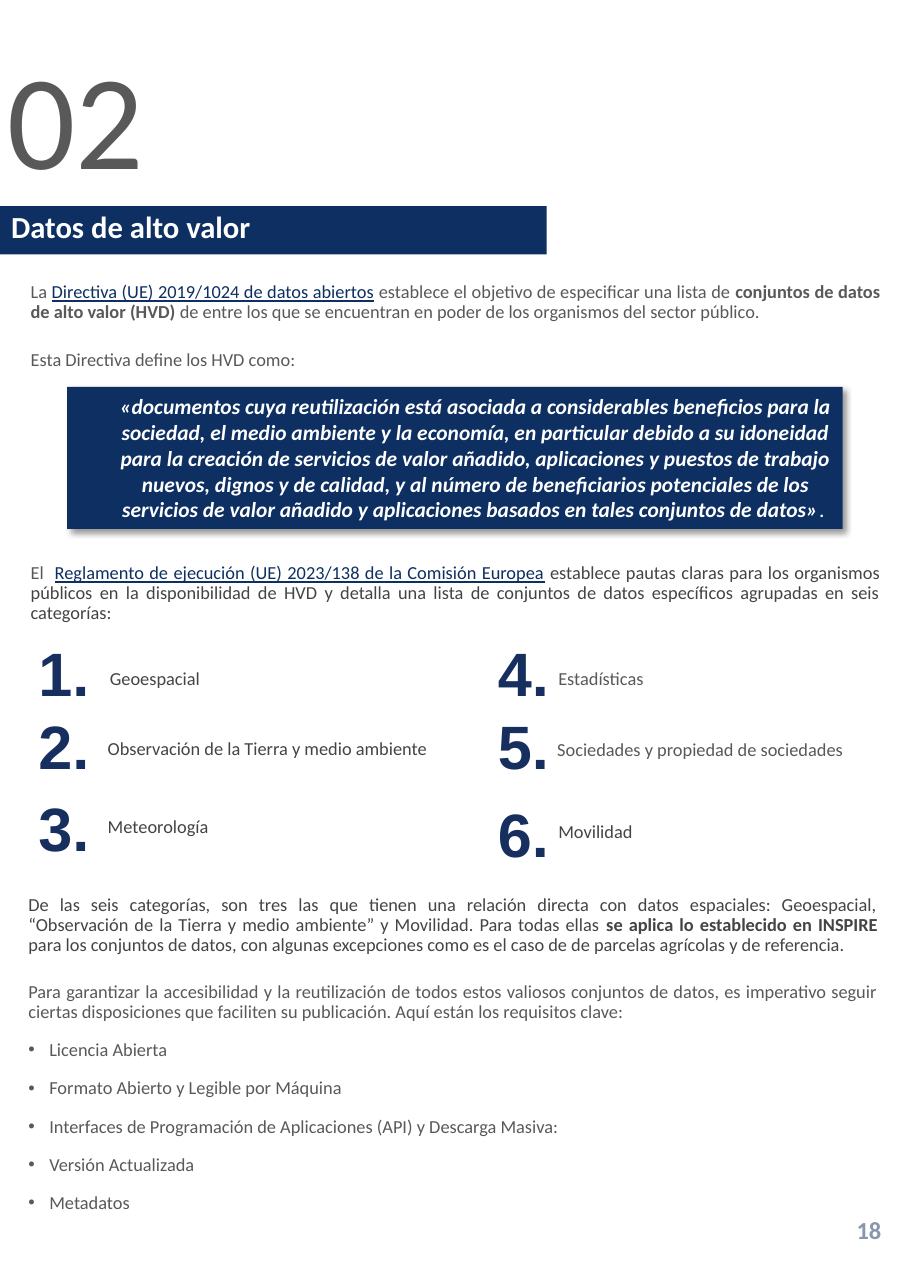
from lxml.etree import SubElement
from pptx import Presentation
from pptx.dml.color import RGBColor
from pptx.enum.shapes import MSO_SHAPE as Shape
from pptx.enum.text import MSO_ANCHOR as Anchor, MSO_AUTO_SIZE as AutoSize, PP_ALIGN as Align
from pptx.oxml.ns import qn
from pptx.util import Inches, Pt

NAVY, NUMERAL, WHITE = "0E2F62", "172F5E", "FFFFFF"
GRAY, DARK, PALE = "595959", "444444", "8996AE"
BODY_WIDTH, BODY_HEIGHT = 95.65, 10.69


def color(value):
    """Turn a hex string into a colour."""
    return RGBColor.from_string(value)


class Page:
    """Style and current slide, measured on a grid of 100 columns by 100 rows."""

    def __init__(self, presentation):
        """Add a title-only slide."""
        self.slide = presentation.slides.add_slide(presentation.slide_layouts[5])
        self.column = presentation.slide_width / 100
        self.row = presentation.slide_height / 100

    def box(self, left, top, width, height):
        """Convert grid lengths to slide lengths."""
        return (round(left * self.column), round(top * self.row),
                round(width * self.column), round(height * self.row))

    def fill_paragraph(self, paragraph, runs, size=12, font="Calibri", align=Align.JUSTIFY,
                       spacing=0.9, before=0, after=0, indent=0, bullet=False):
        """Fill a paragraph with (text, colour, marks) runs; marks are b, i and u."""
        properties = paragraph._p.get_or_add_pPr()
        if indent:
            properties.set("marL", str(Inches(indent)))
        if bullet:
            properties.set("indent", str(-Inches(indent)))
            SubElement(properties, qn("a:buFont")).set("typeface", "Arial")
            SubElement(properties, qn("a:buChar")).set("char", "•")
        paragraph.alignment = align
        paragraph.line_spacing = spacing
        paragraph.space_before, paragraph.space_after = Pt(before), Pt(after)
        for text, fill, marks in runs:
            run = paragraph.add_run()
            run.text = text
            run.font.name, run.font.size = font, Pt(size)
            run.font.color.rgb = color(fill)
            run.font.bold, run.font.italic = "b" in marks, "i" in marks
            run.font.underline = "u" in marks

    def frame(self, shape, anchor=Anchor.TOP):
        """Prepare the text frame of a shape."""
        frame = shape.text_frame
        frame.word_wrap, frame.auto_size = True, AutoSize.NONE
        frame.vertical_anchor = anchor
        return frame

    def title(self, place, text):
        """Place the title as a navy band."""
        shape = self.slide.shapes.title
        shape.left, shape.top, shape.width, shape.height = self.box(*place)
        shape.fill.solid()
        shape.fill.fore_color.rgb = color(NAVY)
        self.fill_paragraph(self.frame(shape).paragraphs[0], [(text, WHITE, "b")],
                            size=20, align=Align.LEFT)

    def text(self, place, *paragraphs, margin=0.1, **style):
        """Add a text box; each paragraph is (runs, its own style)."""
        frame = self.frame(self.slide.shapes.add_textbox(*self.box(*place)))
        frame.margin_left = frame.margin_right = Inches(margin)
        for index, (runs, own) in enumerate(paragraphs):
            paragraph = frame.add_paragraph() if index else frame.paragraphs[0]
            self.fill_paragraph(paragraph, runs, **{**style, **own})

    def quote(self, place, runs):
        """Add a navy panel with a soft shadow and centred text."""
        shape = self.slide.shapes.add_shape(Shape.RECTANGLE, *self.box(*place))
        shape.fill.solid()
        shape.fill.fore_color.rgb = color(NAVY)
        shape.line.fill.background()
        shape.shadow.inherit = False
        effects = shape._element.spPr.find(qn("a:effectLst"))
        shadow = SubElement(effects, qn("a:outerShdw"), blurRad=str(Pt(4)), dist=str(Pt(3)),
                            dir="2700000", algn="tl", rotWithShape="0")
        tint = SubElement(shadow, qn("a:srgbClr"), val="000000")
        SubElement(tint, qn("a:alpha"), val="40000")
        self.fill_paragraph(self.frame(shape, Anchor.MIDDLE).paragraphs[0], runs, size=14,
                            align=Align.CENTER, spacing=1.0, indent=0.38)

    def category(self, number, number_place, label, label_place, fill):
        """Add a large numeral and its label."""
        self.text((*number_place, 8.83, 5.9), ([(f"{number}.", NUMERAL, "b")], {}),
                  size=40, font="Arial", align=Align.LEFT)
        self.text((*label_place, 38, 2.57), ([(label, fill, "")], {}), spacing=1.0)


def main():
    """Build and save the slide."""
    presentation = Presentation()
    presentation.slide_width, presentation.slide_height = Inches(8.27), Inches(11.69)
    page = Page(presentation)
    later = {"before": 12}

    page.title((0, 16, 60, 3.76), "Datos de alto valor")
    page.text((0.73, 3.68, 15.24, 8.55), ([("02", GRAY, "")], {}),
              margin=0, size=88, align=Align.CENTER)
    page.text((90.81, 93.93, 7.13, 3.17), ([("18", PALE, "b")], {}),
              size=16, align=Align.RIGHT, spacing=1.0)

    page.text(
        (2.18, 21.56, BODY_WIDTH, BODY_HEIGHT),
        ([("La ", GRAY, ""),
          ("Directiva (UE) 2019/1024 de datos abiertos", NAVY, "u"),
          (" establece el objetivo de especificar una lista de ", GRAY, ""),
          ("conjuntos de datos de alto valor (HVD) ", GRAY, "b"),
          ("de entre los que se encuentran en poder de los organismos del sector público.",
           GRAY, "")], {}),
        ([("Esta Directiva define los HVD como:", GRAY, "")], later),
        after=6)

    page.quote((7.38, 30.03, 85.13, 11.04), [
        ("«documentos cuya reutilización está asociada a considerables beneficios para la "
         "sociedad, el medio ambiente y la economía, en particular debido a su idoneidad para "
         "la creación de servicios de valor añadido, aplicaciones y puestos de trabajo nuevos, "
         "dignos y de calidad, y al número de beneficiarios potenciales de los servicios de "
         "valor añadido y aplicaciones basados en tales conjuntos de datos»", WHITE, "bi"),
        (". ", WHITE, "")])

    page.text(
        (2.18, 43.37, BODY_WIDTH, BODY_HEIGHT),
        ([("El  ", GRAY, ""),
          ("Reglamento de ejecución (UE) 2023/138 de la Comisión Europea", NAVY, "u"),
          (" establece pautas claras para los organismos públicos en la disponibilidad de HVD "
           "y detalla una lista de conjuntos de datos específicos agrupadas en seis "
           "categorías: ", DARK, "")], {}),
        after=6)

    categories = [
        ((3.02, 49.53), "Geoespacial", (10.88, 51.41), DARK),
        ((3.02, 55.26), "Observación de la Tierra y medio ambiente", (10.64, 56.8), DARK),
        ((3.02, 61.59), "Meteorología", (10.64, 62.87), DARK),
        ((53.45, 49.53), "Estadísticas", (60.1, 51.41), GRAY),
        ((53.45, 55.26), "Sociedades y propiedad de sociedades", (59.98, 56.89), GRAY),
        ((53.45, 62.02), "Movilidad", (60.1, 63.22), DARK),
    ]
    for number, category in enumerate(categories, 1):
        page.category(number, *category)

    requirements = ["Licencia Abierta", "Formato Abierto y Legible por Máquina",
                    "Interfaces de Programación de Aplicaciones (API) y Descarga Masiva:",
                    "Versión Actualizada", "Metadatos"]
    listed = {"before": 6, "indent": 0.19, "bullet": True}
    page.text(
        (1.93, 69.12, BODY_WIDTH, 28),
        ([("De las seis categorías, son tres las que tienen una relación directa con datos "
           "espaciales: Geoespacial, “Observación de la Tierra y medio ambiente” y Movilidad. "
           "Para todas ellas ", DARK, ""),
          ("se aplica lo establecido en INSPIRE ", DARK, "b"),
          ("para los conjuntos de datos, con algunas excepciones como es el caso de de "
           "parcelas agrícolas y de referencia.", DARK, "")], {}),
        ([("Para garantizar la accesibilidad y la reutilización de todos estos valiosos "
           "conjuntos de datos, es imperativo seguir ciertas disposiciones que faciliten su "
           "publicación. Aquí están los requisitos clave:", GRAY, "")], later),
        *[([(requirement, GRAY, "")], listed) for requirement in requirements],
        after=6)

    presentation.save("out.pptx")


if __name__ == "__main__":
    main()
